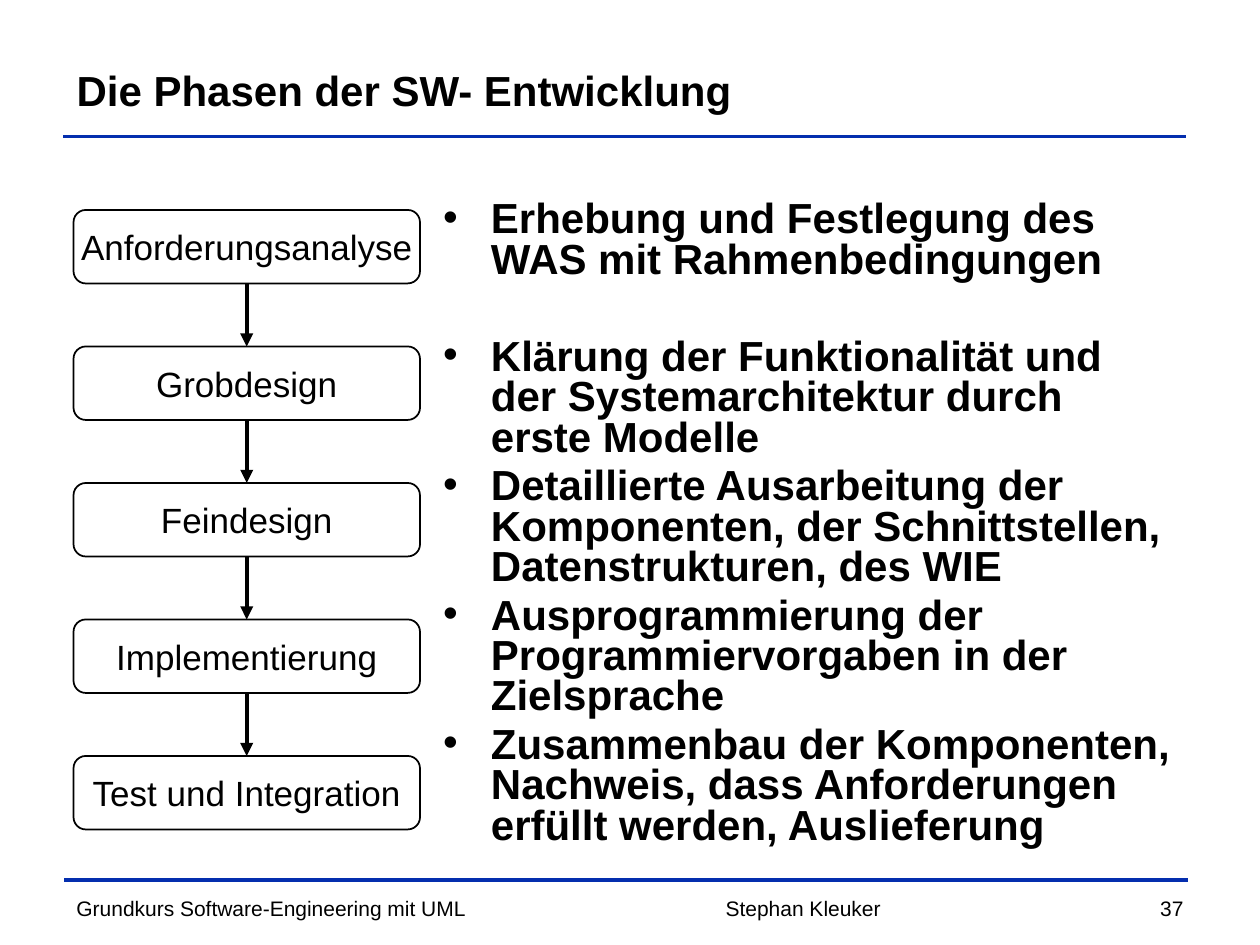
from lxml import etree
from pptx import Presentation
from pptx import util as u
from pptx.dml.color import RGBColor
from pptx.enum import shapes, text
from pptx.oxml import ns

BLACK = RGBColor(0x00, 0x00, 0x00)
BLUE = RGBColor(0x04, 0x2E, 0xAE)

PHASES = [
    ("Anforderungsanalyse", "Erhebung und Festlegung des WAS mit Rahmenbedingungen"),
    ("Grobdesign", "Klärung der Funktionalität und der Systemarchitektur durch erste Modelle"),
    ("Feindesign", "Detaillierte Ausarbeitung der Komponenten, der Schnittstellen, "
                   "Datenstrukturen, des WIE"),
    ("Implementierung", "Ausprogrammierung der Programmiervorgaben in der Zielsprache"),
    ("Test und Integration", "Zusammenbau der Komponenten, Nachweis, dass Anforderungen "
                             "erfüllt werden, Auslieferung"),
]

presentation = Presentation()
presentation.slide_width, presentation.slide_height = u.Inches(10), u.Inches(7.5)
slide = presentation.slides.add_slide(presentation.slide_layouts[1])
unit = presentation.slide_width // 120  # grid of 120 columns by 90 rows


def add_run(paragraph, words, size, bold=False):
    run = paragraph.add_run()
    run.text = words
    run.font.name, run.font.size, run.font.bold = "Arial", u.Pt(size), bold
    run.font.color.rgb = BLACK


def add_line(start_x, start_y, end_x, end_y, color, width):
    line = slide.shapes.add_connector(
        shapes.MSO_CONNECTOR.STRAIGHT, *(round(v * unit) for v in (start_x, start_y, end_x, end_y)))
    line.line.color.rgb, line.line.width = color, u.Pt(width)
    etree.SubElement(line._element.spPr, ns.qn("a:effectLst"))
    return line


# Rules under the title and above the footer
add_line(6, 13, 113, 13, BLUE, 2)
add_line(6.1, 83.8, 113.1, 83.8, BLUE, 2)

# Footer: left, width, alignment, wording
for left, width, alignment, words in [
    (6.1, 41.5, text.PP_ALIGN.LEFT, "Grundkurs Software-Engineering mit UML"),
    (64.7, 23.6, text.PP_ALIGN.CENTER, "Stephan Kleuker"),
    (85.6, 28.3, text.PP_ALIGN.RIGHT, "37"),
]:
    footer = slide.shapes.add_textbox(*(round(v * unit) for v in (left, 84.7, width, 3.5)))
    footer.text_frame.word_wrap = True
    paragraph = footer.text_frame.paragraphs[0]
    paragraph.alignment = alignment
    add_run(paragraph, words, 12)

# Title
title = slide.shapes.title
title.left, title.top, title.width, title.height = (
    round(v * unit) for v in (6.1, 3.4, 106.8, 10.2))
title.text_frame.vertical_anchor = text.MSO_ANCHOR.MIDDLE
title.text_frame.auto_size = text.MSO_AUTO_SIZE.NONE
paragraph = title.text_frame.paragraphs[0]
paragraph.alignment = text.PP_ALIGN.LEFT
add_run(paragraph, "Die Phasen der SW- Entwicklung", 24, bold=True)

# Descriptions of the phases
body = slide.placeholders[1]
body.left, body.top, body.width, body.height = (
    round(v * unit) for v in (41, 18.6, 71.9, 69))
frame = body.text_frame
frame.vertical_anchor = text.MSO_ANCHOR.TOP
frame.auto_size = text.MSO_AUTO_SIZE.NONE
for index, (_, description) in enumerate(PHASES):
    paragraph = frame.add_paragraph() if index else frame.paragraphs[0]
    paragraph.line_spacing = 0.8
    # The second entry is set one line lower, level with its box
    paragraph.space_before = u.Pt(32.5 if index == 1 else 4.8)
    properties = paragraph._p.get_or_add_pPr()
    properties.set("marL", str(u.Inches(0.38)))
    properties.set("indent", str(-u.Inches(0.38)))
    etree.SubElement(properties, ns.qn("a:buFont")).set("typeface", "Arial")
    etree.SubElement(properties, ns.qn("a:buChar")).set("char", "•")
    add_run(paragraph, description, 24, bold=True)

# Phase boxes, 7 rows high and 13 rows apart
boxes = []
for index, (phase, _) in enumerate(PHASES):
    box = slide.shapes.add_shape(
        shapes.MSO_SHAPE.ROUNDED_RECTANGLE, 7 * unit, (20 + 13 * index) * unit, 33 * unit, 7 * unit)
    box.shadow.inherit = False
    box.fill.background()
    box.line.color.rgb, box.line.width = BLACK, u.Pt(1)
    box.text_frame.word_wrap = False
    box.text_frame.vertical_anchor = text.MSO_ANCHOR.MIDDLE
    paragraph = box.text_frame.paragraphs[0]
    paragraph.alignment = text.PP_ALIGN.CENTER
    add_run(paragraph, phase, 20)
    boxes.append(box)

# Arrows from each phase to the next
for upper, lower in zip(boxes, boxes[1:]):
    arrow = add_line(0, 0, 0, 0, BLACK, 2.5)
    arrow.begin_connect(upper, 2)
    arrow.end_connect(lower, 0)
    etree.SubElement(arrow.line._get_or_add_ln(), ns.qn("a:tailEnd")).set("type", "triangle")

presentation.save("out.pptx")
